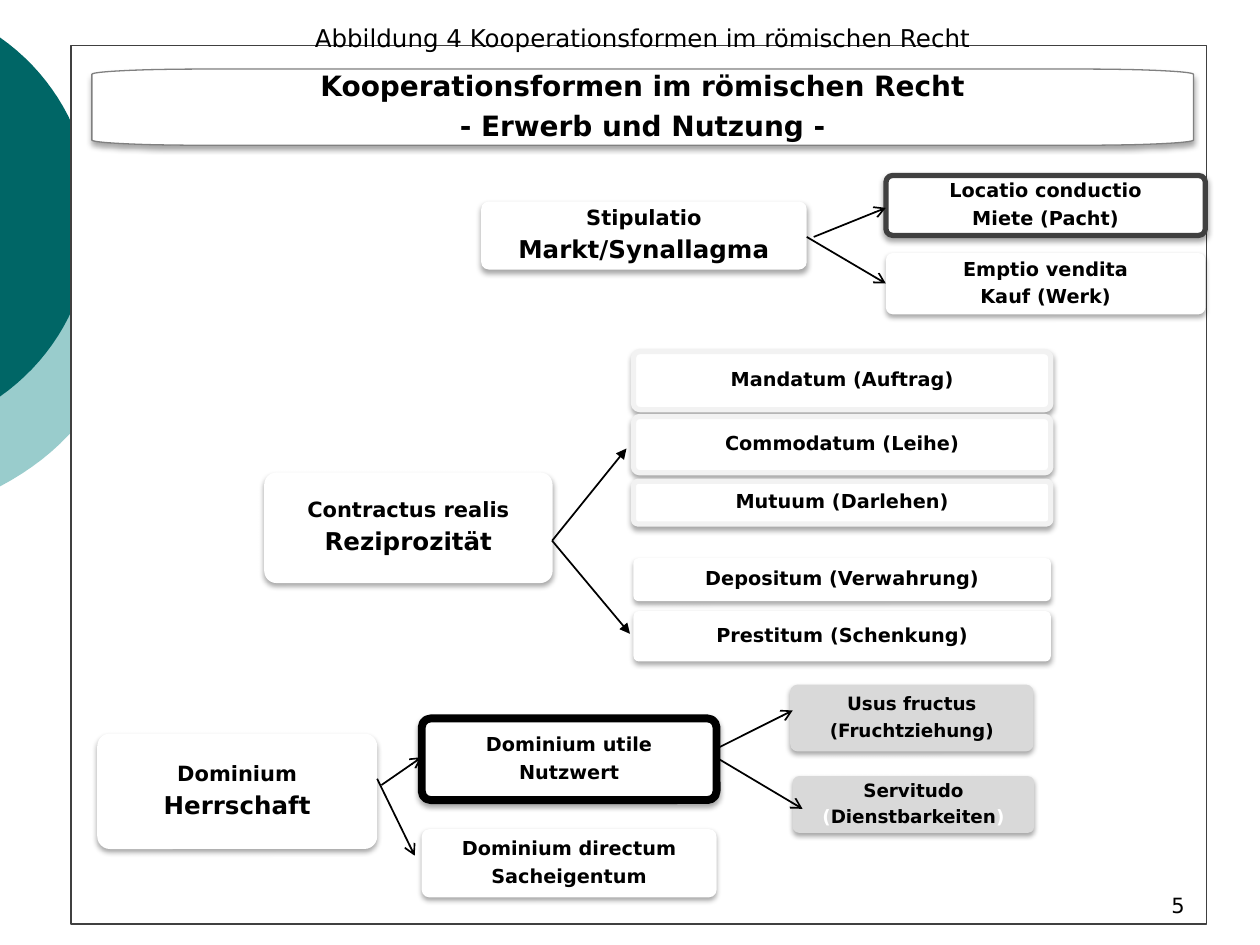
from lxml import etree
from pptx import Presentation
from pptx import util as u
from pptx.dml.color import RGBColor
from pptx.enum import shapes, text
from pptx.oxml import ns

BLACK = RGBColor(0x00, 0x00, 0x00)
WHITE = RGBColor(0xFF, 0xFF, 0xFF)
DARK_GREY = RGBColor(0x40, 0x40, 0x40)
MID_GREY = RGBColor(0x80, 0x80, 0x80)
LIGHT_GREY = RGBColor(0xD9, 0xD9, 0xD9)
PALE_GREY = RGBColor(0xF2, 0xF2, 0xF2)
TEAL = RGBColor(0x00, 0x66, 0x66)
PALE_TEAL = RGBColor(0x99, 0xCC, 0xCC)
FONT = "DejaVu Sans"


def curve(start, pull_a, pull_b, end, steps=20):
    """Points along a cubic Bézier curve."""
    points = []
    for step in range(steps + 1):
        t = step / steps
        weights = ((1 - t) ** 3, 3 * t * (1 - t) ** 2, 3 * t * t * (1 - t), t ** 3)
        points.append(tuple(sum(w * p[axis] for w, p in zip(weights, (start, pull_a, pull_b, end)))
                            for axis in (0, 1)))
    return points


class Board:
    """Holds the style and the current slide; all lengths are in points."""

    def __init__(self, slide):
        self.slide = slide

    def paint(self, shape, fill, line=None, width=0.75, shadow=False):
        shape.fill.solid()
        shape.fill.fore_color.rgb = fill
        if line is None:
            shape.line.fill.background()
        else:
            shape.line.color.rgb = line
            shape.line.width = u.Pt(width)
        shape.shadow.inherit = False
        if shadow:
            effects = shape._element.spPr.find(ns.qn("a:effectLst"))
            outer = etree.SubElement(effects, ns.qn("a:outerShdw"), blurRad=str(u.Pt(3.1)),
                                     dist=str(u.Pt(1.8)), dir="5400000", rotWithShape="0")
            shade = etree.SubElement(outer, ns.qn("a:srgbClr"), val="000000")
            etree.SubElement(shade, ns.qn("a:alpha"), val="35000")

    def style_run(self, run, size, bold, color=BLACK):
        run.font.name, run.font.size, run.font.bold = FONT, u.Pt(size), bold
        run.font.color.rgb = color

    def set_text(self, shape, lines, sizes, bold=True, align=text.PP_ALIGN.CENTER,
                 anchor=text.MSO_ANCHOR.MIDDLE):
        frame = shape.text_frame
        frame.text = "\n".join(lines)
        frame.word_wrap = True
        frame.auto_size = text.MSO_AUTO_SIZE.NONE
        frame.vertical_anchor = anchor
        for paragraph, size in zip(frame.paragraphs, sizes):
            paragraph.alignment = align
            if bold:
                paragraph.line_spacing = 0.9
                paragraph.space_after = u.Pt(0.36 * size)
            for run in paragraph.runs:
                self.style_run(run, size, bold)

    def set_margins(self, shape, margin):
        frame = shape.text_frame
        frame.margin_left = frame.margin_right = u.Pt(margin)
        frame.margin_top = frame.margin_bottom = u.Pt(margin)

    def outline(self, points, *look, **options):
        corners = [(u.Pt(x), u.Pt(y)) for x, y in points]
        builder = self.slide.shapes.build_freeform(*corners[0])
        builder.add_line_segments(corners[1:], close=True)
        self.paint(builder.convert_to_shape(), *look, **options)

    def disc(self, width, middle, half, color):
        """Part of a disc that reaches in from the left edge."""
        upper = curve((0, middle - half), (0.64 * width, middle - 0.77 * half),
                      (width, middle - 0.4 * half), (width, middle))
        self.outline(upper + [(x, 2 * middle - y) for x, y in upper[-2::-1]], color)

    def banner(self, left, top, width, height, rx, ry):
        corner = curve((left, top + ry), (left, top + 0.45 * ry),
                       (left + 0.45 * rx, top), (left + rx, top))
        upper = corner + [(2 * left + width - x, y) for x, y in corner[::-1]]
        lower = [(x, 2 * top + height - y) for x, y in upper[::-1]]
        self.outline(upper + lower, WHITE, MID_GREY, shadow=True)

    def title(self, lines, left, top, width, height):
        heading = self.slide.shapes.title
        heading.left, heading.top = u.Pt(left), u.Pt(top)
        heading.width, heading.height = u.Pt(width), u.Pt(height)
        self.set_text(heading, lines, (16, 16))
        self.set_margins(heading, 4)
        self.slide.shapes._spTree.append(heading._element)  # in front of the banner

    def panel(self, *place):
        shape = self.slide.shapes.add_shape(shapes.MSO_SHAPE.RECTANGLE, *map(u.Pt, place))
        self.paint(shape, WHITE, DARK_GREY)

    def box(self, lines, place, sizes=(11, 11), fill=WHITE, line=None, width=3):
        shape = self.slide.shapes.add_shape(shapes.MSO_SHAPE.ROUNDED_RECTANGLE, *map(u.Pt, place))
        shape.adjustments[0] = 0.11
        self.paint(shape, fill, line, width, shadow=True)
        self.set_text(shape, lines, sizes)
        self.set_margins(shape, 2.5)
        return shape

    def label(self, words, place, size, align, anchor):
        note = self.slide.shapes.add_textbox(*map(u.Pt, place))
        self.set_text(note, [words], [size], False, align, anchor)

    def whiten_brackets(self, paragraph, size):
        word = paragraph.text.strip("()")
        paragraph.clear()
        for piece, color in (("(", WHITE), (word, BLACK), (")", WHITE)):
            run = paragraph.add_run()
            run.text = piece
            self.style_run(run, size, True, color)

    def arrow(self, start, end, head="arrow"):
        line = self.slide.shapes.add_connector(
            shapes.MSO_CONNECTOR.STRAIGHT, *map(u.Pt, start + end))
        line.line.color.rgb = BLACK
        line.line.width = u.Pt(1)
        properties = line._element.spPr
        etree.SubElement(properties.find(ns.qn("a:ln")), ns.qn("a:tailEnd"), type=head)
        etree.SubElement(properties, ns.qn("a:effectLst"))


def main():
    deck = Presentation()
    deck.slide_width, deck.slide_height = u.Pt(720), u.Pt(540)
    board = Board(deck.slides.add_slide(deck.slide_layouts[5]))

    board.disc(69, 177, 101, PALE_TEAL)
    board.disc(52.6, 124, 102.6, TEAL)
    board.panel(40.5, 26, 649, 502)
    banner = (52.5, 39.5, 629.5, 43.5)
    board.banner(*banner, rx=62.6, ry=3)
    board.title(["Kooperationsformen im römischen Recht", "- Erwerb und Nutzung -"], *banner)

    for name, principle, place in (
        ("Stipulatio", "Markt/Synallagma", (275, 115.2, 186, 38.8)),
        ("Contractus realis", "Reziprozität", (151, 270, 164.8, 63.2)),
        ("Dominium", "Herrschaft", (55.6, 419.2, 160, 66)),
    ):
        board.box([name, principle], place, sizes=(12, 14))

    board.box(["Locatio conductio", "Miete (Pacht)"], (506.3, 100.3, 182.5, 34.2), line=DARK_GREY)
    board.box(["Emptio vendita", "Kauf (Werk)"], (506.3, 144.6, 182.5, 35))

    for contract, top, height, edge in (
        ("Mandatum (Auftrag)", 200.9, 33.2, PALE_GREY),
        ("Commodatum (Leihe)", 238, 32.2, PALE_GREY),
        ("Mutuum (Darlehen)", 275, 24.5, PALE_GREY),
        ("Depositum (Verwahrung)", 319, 24.5, None),
        ("Prestitum (Schenkung)", 349.2, 28.8, None),
    ):
        board.box([contract], (362, top, 238.5, height), line=edge)

    board.box(["Dominium utile", "Nutzwert"], (241, 410.5, 168.5, 46.7), line=BLACK, width=4.5)
    board.box(["Dominium directum", "Sacheigentum"], (241, 473.8, 168.5, 39))
    board.label("5", (516, 492, 168, 36), 12, text.PP_ALIGN.RIGHT, text.MSO_ANCHOR.BOTTOM)

    small = (10.5, 10.5)
    board.box(["Usus fructus", "(Fruchtziehung)"], (451.6, 391.2, 139, 38.2), small, LIGHT_GREY)
    servitude = board.box(["Servitudo", "(Dienstbarkeiten)"], (453, 443.5, 138, 32.4),
                          small, LIGHT_GREY)
    board.whiten_brackets(servitude.text_frame.paragraphs[1], small[1])

    for start, end in (
        ((465, 135.4), (506.2, 118.8)), ((461, 135.4), (506.2, 162)),
        ((218, 448.6), (241, 432.7)), ((215.5, 445), (237, 489)),
        ((408.2, 428.4), (453, 406)), ((409, 432.7), (458.6, 462.2)),
    ):
        board.arrow(start, end)
    for end in ((358, 256.3), (360, 362.2)):
        board.arrow((315.5, 309), end, "triangle")

    board.label("Abbildung 4 Kooperationsformen im römischen Recht", (172.8, 9.4, 459.4, 24.5), 14,
                text.PP_ALIGN.LEFT, text.MSO_ANCHOR.TOP)
    deck.save("out.pptx")


if __name__ == "__main__":
    main()
